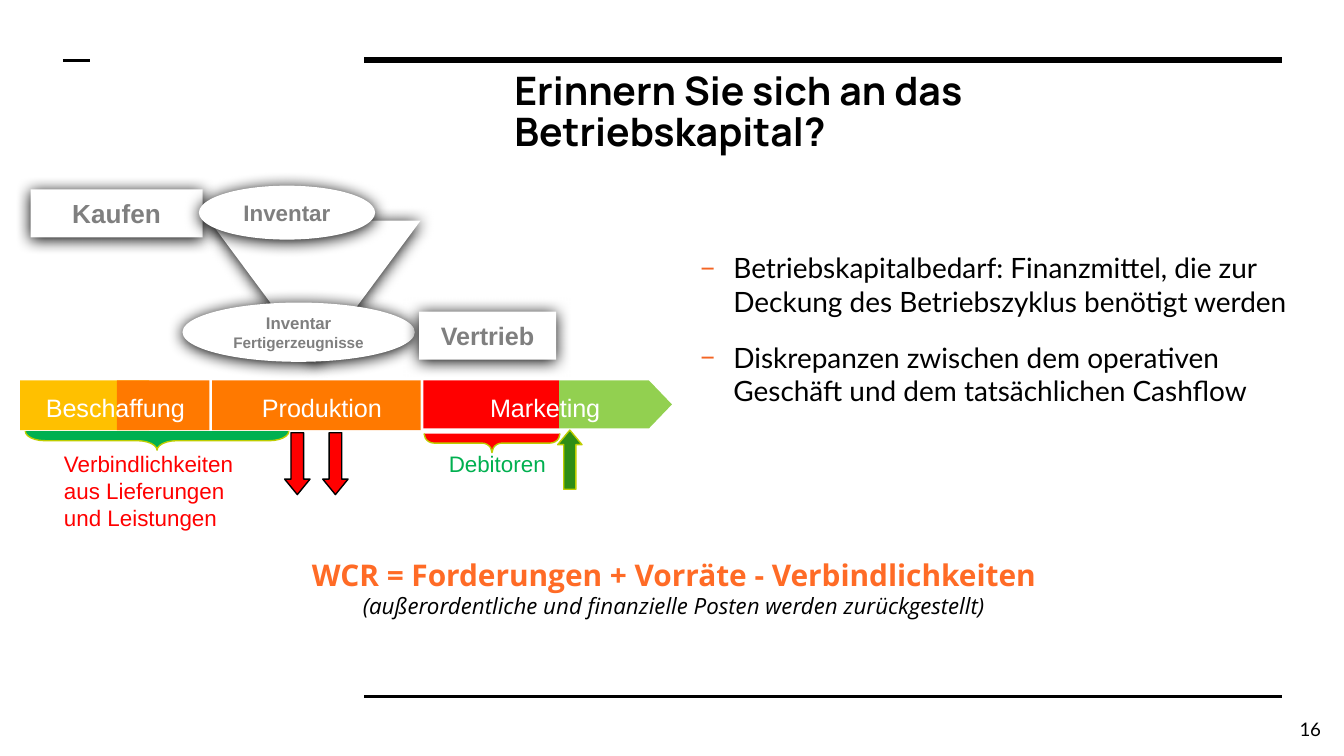
import pptx
import pptx.util
import pptx.dml.color
import pptx.enum.shapes
import pptx.enum.text
import pptx.oxml
import pptx.oxml.ns
from dataclasses import dataclass

Cm = pptx.util.Cm
Pt = pptx.util.Pt
Shape = pptx.enum.shapes.MSO_SHAPE
Align = pptx.enum.text.PP_ALIGN
Anchor = pptx.enum.text.MSO_ANCHOR
NS = pptx.oxml.ns.nsdecls("a")


@dataclass(frozen=True)
class Theme:
    black: str = "000000"
    white: str = "FFFFFF"
    grey: str = "7F7F7F"
    amber: str = "FFC000"
    orange: str = "FF7900"
    red: str = "FF0000"
    lime: str = "92D050"
    green: str = "00B050"
    dark_green: str = "2E8D15"
    olive: str = "BECD00"
    formula: str = "FF6B26"
    bullet: str = "F46524"
    title_size: float = 21
    formula_size: float = 16
    body_size: float = 15
    purchase_size: float = 14
    stage_size: float = 13.5
    label_size: float = 12
    number_size: float = 10
    stock_size: float = 9
    stock_detail_size: float = 8.2
    title_font: str = "Manrope"
    body_font: str = "Lato"
    formula_font: str = "Open Sans"
    diagram_font: str = "Arial"


THEME = Theme()


def rgb(color):
    return pptx.dml.color.RGBColor.from_string(color)


def place(element, box):
    element.left, element.top, element.width, element.height = map(Cm, box)


def add_run(paragraph, text, size, color, font, bold=False, italic=False):
    run = paragraph.add_run()
    run.text = text
    run.font.size = Pt(size)
    run.font.color.rgb = rgb(color)
    run.font.name = font
    run.font.bold = bold
    run.font.italic = italic


def set_frame(frame, anchor, inset_y=0.13, wrap=True):
    frame.auto_size = pptx.enum.text.MSO_AUTO_SIZE.NONE
    frame.word_wrap = wrap
    frame.vertical_anchor = anchor
    frame.margin_left = frame.margin_right = Cm(0.25)
    frame.margin_top = frame.margin_bottom = Cm(inset_y)


def write_lines(paragraph, lines):
    for index, line in enumerate(lines):
        if index:
            paragraph.add_line_break()
        add_run(paragraph, *line)


def add_rule(slide, left, right, y, weight):
    rule = slide.shapes.add_connector(
        pptx.enum.shapes.MSO_CONNECTOR.STRAIGHT, Cm(left), Cm(y), Cm(right), Cm(y))
    rule.line.color.rgb = rgb(THEME.black)
    rule.line.width = Pt(weight)
    rule._element.spPr.append(pptx.oxml.parse_xml(f"<a:effectLst {NS}/>"))


def add_text(slide, box, lines, align=Align.LEFT, anchor=Anchor.MIDDLE):
    label = slide.shapes.add_textbox(*map(Cm, box))
    set_frame(label.text_frame, anchor)
    paragraph = label.text_frame.paragraphs[0]
    paragraph.alignment = align
    write_lines(paragraph, lines)


def add_block(slide, kind, box, fill, outline=None, adjustments=(), rotation=0):
    block = slide.shapes.add_shape(kind, *map(Cm, box))
    block.shadow.inherit = False
    block.fill.solid()
    block.fill.fore_color.rgb = rgb(fill)
    if outline:
        block.line.color.rgb = rgb(outline)
        block.line.width = Pt(0.75)
    else:
        block.line.fill.background()
    for index, value in enumerate(adjustments):
        block.adjustments[index] = value
    block.rotation = rotation
    return block


def add_card(slide, kind, box, lines=()):
    card = add_block(slide, kind, box, THEME.white)
    effects = card._element.spPr.find(pptx.oxml.ns.qn("a:effectLst"))
    effects.append(pptx.oxml.parse_xml(
        f'<a:outerShdw {NS} blurRad="{Pt(8.5)}" dist="{Pt(1)}" dir="5400000" '
        f'rotWithShape="0"><a:srgbClr val="{THEME.black}"/></a:outerShdw>'))
    if lines:
        set_frame(card.text_frame, Anchor.MIDDLE, wrap=False)
        paragraph = card.text_frame.paragraphs[0]
        paragraph.alignment = Align.CENTER
        write_lines(paragraph, [
            (text, size, THEME.grey, THEME.diagram_font, True) for text, size in lines])


def fill_title(title):
    place(title, (9.47, 1.12, 9.12, 1.42))
    set_frame(title.text_frame, Anchor.TOP, 0.25)
    heading = title.text_frame.paragraphs[0]
    heading.alignment = Align.LEFT
    heading.line_spacing = 0.88
    add_run(heading, "Erinnern Sie sich an das Betriebskapital?",
            THEME.title_size, THEME.black, THEME.title_font, True)


def fill_points(body):
    place(body, (12.34, 3.25, 12.4, 5.94))
    set_frame(body.text_frame, Anchor.MIDDLE, 0.25)
    points = (
        ("Betriebskapitalbedarf: Finanzmittel, die zur Deckung des "
         "Betriebszyklus benötigt werden", 6, 0),
        ("Diskrepanzen zwischen dem operativen Geschäft und dem "
         "tatsächlichen Cashflow", 12, 6),
    )
    for index, (text, before, after) in enumerate(points):
        point = body.text_frame.add_paragraph() if index else body.text_frame.paragraphs[0]
        point.alignment = Align.LEFT
        point.space_before, point.space_after = Pt(before), Pt(after)
        properties = point._p.get_or_add_pPr()
        properties.set("marL", str(Cm(1.27)))
        properties.set("indent", str(-Cm(0.64)))
        for bullet in (f'<a:buClr {NS}><a:srgbClr val="{THEME.bullet}"/></a:buClr>',
                       f'<a:buFont {NS} typeface="{THEME.body_font}"/>',
                       f'<a:buChar {NS} char="−"/>'):
            properties.append(pptx.oxml.parse_xml(bullet))
        add_run(point, text, THEME.body_size, THEME.black, THEME.body_font)


def draw_cycle(slide):
    for left, width, height, color in (
            (0.38, 2.44, 0.94, THEME.amber), (8, 2.57, 0.91, THEME.red),
            (4.01, 3.94, 0.94, THEME.orange), (2.21, 1.75, 0.94, THEME.orange)):
        add_block(slide, Shape.RECTANGLE, (left, 7.19, width, height), color)

    add_card(slide, Shape.RECTANGLE, (0.58, 3.58, 3.25, 0.91),
             [("Kaufen", THEME.purchase_size)])
    add_card(slide, Shape.FLOWCHART_MERGE, (3.96, 4.17, 3.99, 2.69))
    add_card(slide, Shape.OVAL, (3.76, 3.51, 3.33, 1.02),
             [("Inventar", THEME.label_size)])
    add_card(slide, Shape.OVAL, (3.45, 5.72, 4.39, 1.12),
             [("Inventar", THEME.stock_size),
              ("Fertigerzeugnisse", THEME.stock_detail_size)])
    add_card(slide, Shape.RECTANGLE, (7.92, 5.89, 2.59, 0.91),
             [("Vertrieb", THEME.stage_size)])

    add_block(slide, Shape.PENTAGON, (10.57, 7.19, 2.13, 0.91), THEME.lime,
              adjustments=[0.48])
    for stage, left, width in (("Beschaffung", 0.58, 3.2), ("Produktion", 4.32, 3.53),
                               ("Marketing", 8.36, 3.89)):
        add_text(slide, (left, 7.37, width, 0.66),
                 [(stage, THEME.stage_size, THEME.white, THEME.diagram_font)], Align.CENTER)

    for left in (5.38, 6.1):
        add_block(slide, Shape.DOWN_ARROW, (left, 8.18, 0.48, 1.17), THEME.red,
                  THEME.black, [0.5, 0.61])
    add_block(slide, Shape.UP_ARROW, (10.54, 8.13, 0.46, 1.12), THEME.dark_green,
              THEME.olive, [0.5, 0.6])
    for box, color, curve in (((2.79, 5.84, 0.36, 4.98), THEME.green, 1.03),
                              ((9.12, 7.09, 0.36, 2.57), THEME.red, 0.53)):
        add_block(slide, Shape.LEFT_BRACE, box, color, THEME.olive, [curve, 0.5], 270)

    add_text(slide, (0.96, 8.38, 4.01, 1.8),
             [("Verbindlichkeiten aus Lieferungen und Leistungen",
               THEME.label_size, THEME.red, THEME.diagram_font)])
    add_text(slide, (7.24, 8.43, 4.32, 0.66),
             [("Debitoren", THEME.label_size, THEME.green, THEME.diagram_font)], Align.CENTER)


def main():
    deck = pptx.Presentation()
    deck.slide_width, deck.slide_height = Cm(25.4), Cm(14.29)
    slide = deck.slides.add_slide(deck.slide_layouts[1])
    fill_title(slide.shapes.title)
    fill_points(slide.placeholders[1])
    for left, right, y, weight in ((6.88, 24.23, 1.14, 3), (6.88, 24.23, 13.16, 1.5),
                                   (1.19, 1.7, 1.14, 1.5)):
        add_rule(slide, left, right, y, weight)
    add_text(slide, (4.22, 10.39, 17.04, 2.06), [
        ("WCR = Forderungen + Vorräte - Verbindlichkeiten",
         THEME.formula_size, THEME.formula, THEME.formula_font, True),
        ("(außerordentliche und finanzielle Posten werden zurückgestellt)",
         THEME.label_size, THEME.black, THEME.formula_font, False, True),
    ], Align.CENTER, Anchor.TOP)
    add_text(slide, (24.31, 13.61, 1.09, 0.33),
             [("16", THEME.number_size, THEME.black, THEME.body_font)])
    draw_cycle(slide)
    deck.save("out.pptx")


if __name__ == "__main__":
    main()
